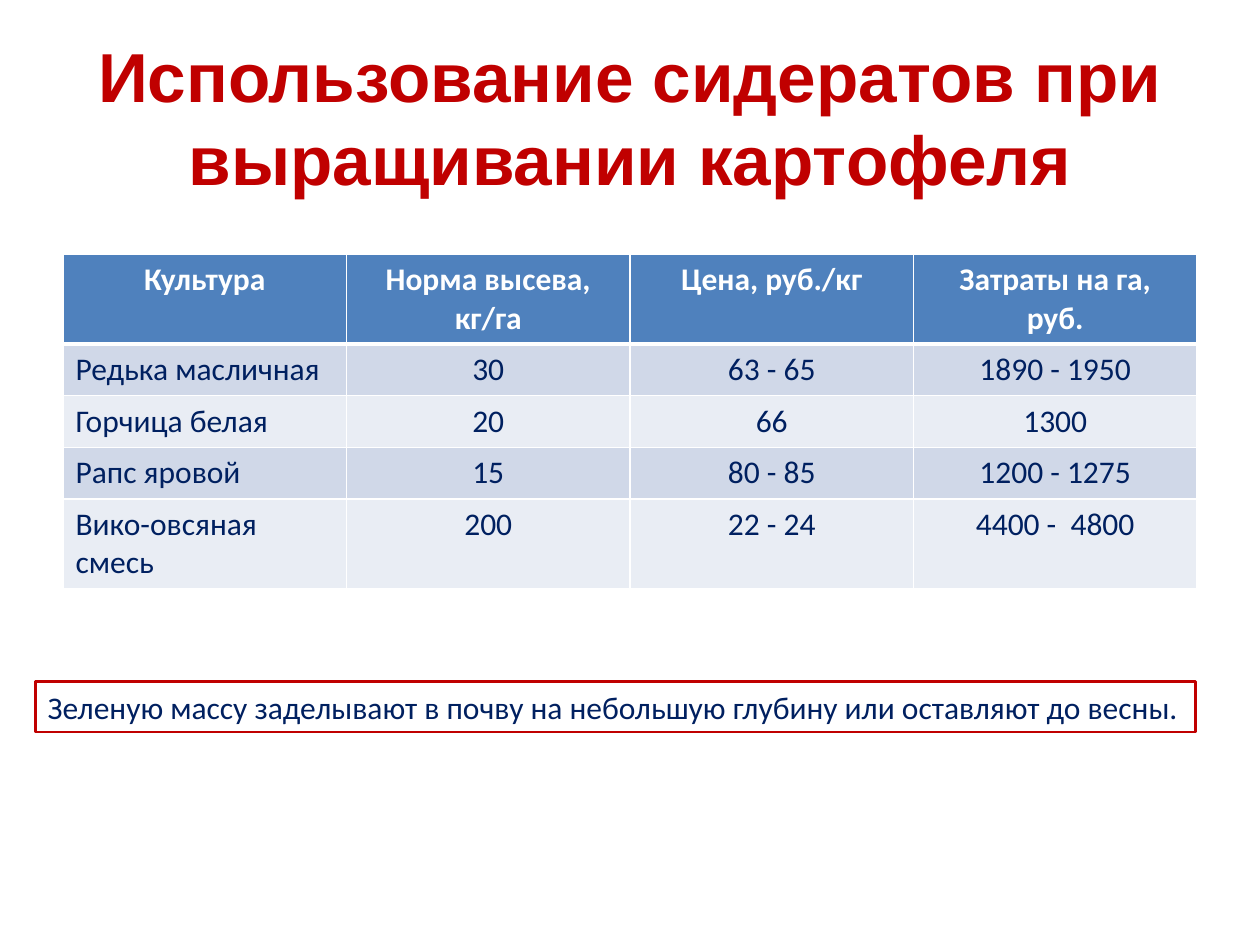
from lxml import etree
from pptx import Presentation
from pptx.dml.color import RGBColor
from pptx.enum.shapes import MSO_SHAPE
from pptx.enum.text import MSO_ANCHOR, MSO_AUTO_SIZE, PP_ALIGN
from pptx.oxml.ns import qn
from pptx.util import Inches, Pt

LEFT, CENTER = PP_ALIGN.LEFT, PP_ALIGN.CENTER
MIDDLE = MSO_ANCHOR.MIDDLE
RECT = MSO_SHAPE.RECTANGLE
GROW = MSO_AUTO_SIZE.SHAPE_TO_FIT_TEXT

THEME = {
    "red": RGBColor(0xC0, 0x00, 0x00),
    "navy": RGBColor(0x00, 0x20, 0x60),
    "white": RGBColor(0xFF, 0xFF, 0xFF),
    "head": RGBColor(0x4F, 0x81, 0xBD),
    "bands": [RGBColor(0xE9, 0xED, 0xF4), RGBColor(0xD0, 0xD8, 0xE8)],
    "title": Pt(39.6),
    "body": Pt(18),
}


def style(para, size, color, bold=False, align=CENTER, face="Calibri"):
    para.alignment = align
    font = para.font
    font.name, font.size, font.bold = face, size, bold
    font.color.rgb = color


def edge(cell, side, width):
    """Draw one white cell border; side is L, R, T or B."""
    line = etree.SubElement(cell._tc.get_or_add_tcPr(), qn("a:ln" + side), w=str(Pt(width)))
    fill = etree.SubElement(line, qn("a:solidFill"))
    etree.SubElement(fill, qn("a:srgbClr"), val=str(THEME["white"]))


prs = Presentation()
prs.slide_width, prs.slide_height = Inches(10), Inches(7.5)
slide = prs.slides.add_slide(prs.slide_layouts[5])

title = slide.shapes.title
title.left, title.top = Inches(0.5), Inches(0.3)
title.width, title.height = Inches(9), Inches(1.25)
title.text_frame.text = "Использование сидератов при выращивании картофеля"
title.text_frame.vertical_anchor = MIDDLE
style(title.text_frame.paragraphs[0], THEME["title"], THEME["red"], True, face="Arial")

rows = [
    ["Культура", "Норма высева, кг/га", "Цена, руб./кг", "Затраты на га,\nруб."],
    ["Редька масличная", "30", "63 - 65", "1890 - 1950"],
    ["Горчица белая", "20", "66", "1300"],
    ["Рапс яровой", "15", "80 - 85", "1200 - 1275"],
    ["Вико-овсяная смесь", "200", "22 - 24", "4400 -  4800"],
]
heights = [0.7, 0.41, 0.41, 0.41, 0.7]
table = slide.shapes.add_table(
    len(rows), len(rows[0]), Inches(0.5), Inches(2.02), Inches(9), Inches(sum(heights))
).table
for r, row in enumerate(rows):
    table.rows[r].height = Inches(heights[r])
    head = r == 0
    for c, text in enumerate(row):
        cell = table.cell(r, c)
        cell.text = text
        for para in cell.text_frame.paragraphs:
            style(para, THEME["body"], THEME["white" if head else "navy"], head,
                  LEFT if c == 0 and not head else CENTER)
        for side in "LRTB":
            thick = (head and side == "B") or (r == 1 and side == "T")
            edge(cell, side, 3 if thick else 1)
        cell.fill.solid()
        cell.fill.fore_color.rgb = THEME["head"] if head else THEME["bands"][r % 2]

note = slide.shapes.add_shape(RECT, Inches(0.28), Inches(5.41), Inches(9.21), Inches(0.4))
note.shadow.inherit = False
note.fill.background()
note.line.color.rgb = THEME["red"]
note.line.width = Pt(1.5)
frame = note.text_frame
frame.word_wrap = False
frame.auto_size = GROW
frame.text = "Зеленую массу заделывают в почву на небольшую глубину или оставляют до весны."
style(frame.paragraphs[0], THEME["body"], THEME["navy"], align=LEFT)

prs.save("out.pptx")
